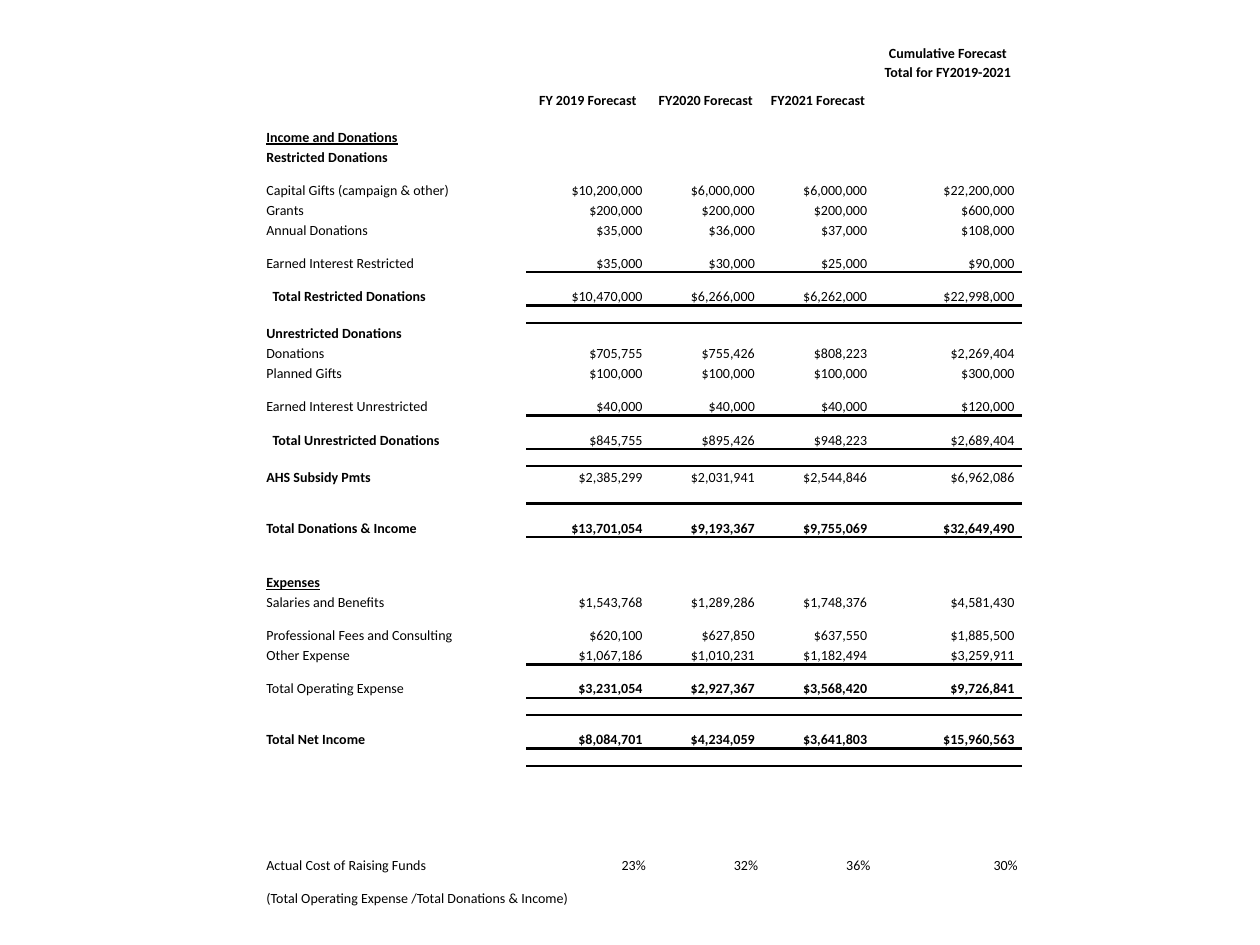
from dataclasses import dataclass

from lxml.etree import SubElement
from pptx import Presentation
from pptx.dml.color import RGBColor
from pptx.enum.text import MSO_ANCHOR, PP_ALIGN
from pptx.oxml.ns import qn
from pptx.util import Pt


@dataclass(frozen=True)
class Theme:
    font: str = "Calibri"
    size: float = 8
    ink: str = "000000"
    rule: float = 1.5
    line_spacing: float = 1.15
    inset: float = 2.2
    money_inset: float = 4
    indent: float = 3.6


@dataclass(frozen=True)
class Line:
    label: str = ""
    values: tuple = ()
    height: float = 11.2
    bold: bool = False
    underline: bool = False
    bold_values: bool = False
    indent: bool = False
    rule: bool = False


THEME = Theme()
SPACER, SPACED = 10, 19
COLUMNS = (133.4, 14.8, 70.6, 64.2, 64.2, 84.2)
FIRST_VALUE = 2
PLAIN_TABLE = "{2D5ABB26-0587-4C30-8999-92F81FD0307C}"
HEADINGS = ("FY 2019 Forecast", "FY2020 Forecast", "FY2021 Forecast",
            "Cumulative Forecast Total for FY2019-2021")
GAP = Line(height=SPACER)

FORECAST = (
    Line(height=38.2),
    GAP,
    Line("Income and Donations", bold=True, underline=True),
    Line("Restricted Donations", bold=True),
    Line("Capital Gifts (campaign & other)",
         ("$10,200,000", "$6,000,000", "$6,000,000", "$22,200,000"), SPACED),
    Line("Grants", ("$200,000", "$200,000", "$200,000", "$600,000")),
    Line("Annual Donations", ("$35,000", "$36,000", "$37,000", "$108,000")),
    Line("Earned Interest Restricted",
         ("$35,000", "$30,000", "$25,000", "$90,000"), SPACED, rule=True),
    Line("Total Restricted Donations",
         ("$10,470,000", "$6,266,000", "$6,262,000", "$22,998,000"), SPACED,
         bold=True, indent=True, rule=True),
    GAP,
    Line("Unrestricted Donations", bold=True),
    Line("Donations", ("$705,755", "$755,426", "$808,223", "$2,269,404")),
    Line("Planned Gifts", ("$100,000", "$100,000", "$100,000", "$300,000")),
    Line("Earned Interest Unrestricted",
         ("$40,000", "$40,000", "$40,000", "$120,000"), SPACED, rule=True),
    Line("Total Unrestricted Donations",
         ("$845,755", "$895,426", "$948,223", "$2,689,404"), SPACED,
         bold=True, indent=True, rule=True),
    GAP,
    Line("AHS Subsidy Pmts",
         ("$2,385,299", "$2,031,941", "$2,544,846", "$6,962,086"), bold=True),
    Line(height=SPACER, rule=True),
    Line("Total Donations & Income",
         ("$13,701,054", "$9,193,367", "$9,755,069", "$32,649,490"), SPACED,
         bold=True, bold_values=True),
    GAP,
    GAP,
    Line("Expenses", bold=True, underline=True),
    Line("Salaries and Benefits",
         ("$1,543,768", "$1,289,286", "$1,748,376", "$4,581,430")),
    Line("Professional Fees and Consulting",
         ("$620,100", "$627,850", "$637,550", "$1,885,500"), SPACED),
    Line("Other Expense",
         ("$1,067,186", "$1,010,231", "$1,182,494", "$3,259,911"), rule=True),
    Line("Total Operating Expense",
         ("$3,231,054", "$2,927,367", "$3,568,420", "$9,726,841"), SPACED,
         bold_values=True, rule=True),
    GAP,
    Line("Total Net Income",
         ("$8,084,701", "$4,234,059", "$3,641,803", "$15,960,563"), SPACED,
         bold=True, bold_values=True, rule=True),
    GAP,
    Line("Actual Cost of Raising Funds", ("23%", "32%", "36%", "30%"), 61.9),
    Line("(Total Operating Expense /Total Donations & Income)", height=SPACED),
)


def write(cell, text, *, bold=False, underline=False, align=PP_ALIGN.LEFT,
          anchor=MSO_ANCHOR.BOTTOM, left=THEME.inset, right=THEME.inset):
    cell.margin_left, cell.margin_right = Pt(left), Pt(right)
    cell.vertical_anchor = anchor
    paragraph = cell.text_frame.paragraphs[0]
    paragraph.alignment = align
    paragraph.line_spacing = THEME.line_spacing
    run = paragraph.add_run()
    run.text = text
    run.font.name = THEME.font
    run.font.size = Pt(THEME.size)
    run.font.bold = bold
    run.font.underline = underline
    run.font.color.rgb = RGBColor.from_string(THEME.ink)


def clear(cell):
    cell.margin_top = cell.margin_bottom = 0
    cell.fill.background()
    paragraph = cell.text_frame.paragraphs[0]
    SubElement(paragraph._p, qn("a:endParaRPr"), sz=str(THEME.size * 100))


def draw_rules(cell, sides):
    properties = cell._tc.get_or_add_tcPr()
    for position, side in enumerate(sides):
        edge = SubElement(properties, qn(f"a:{side}"), w=str(Pt(THEME.rule)))
        fill = SubElement(edge, qn("a:solidFill"))
        SubElement(fill, qn("a:srgbClr"), val=THEME.ink)
        properties.insert(position, edge)


def add_forecast(slide, left, top):
    frame = slide.shapes.add_table(
        len(FORECAST), len(COLUMNS), Pt(left), Pt(top), Pt(sum(COLUMNS)),
        Pt(sum(line.height for line in FORECAST)))
    table = frame.table
    table.first_row = table.horz_banding = False
    table._tbl.tblPr.find(qn("a:tableStyleId")).text = PLAIN_TABLE
    for column, width in zip(table.columns, COLUMNS):
        column.width = Pt(width)
    for cell in table.iter_cells():
        clear(cell)

    for column, heading in enumerate(HEADINGS, FIRST_VALUE):
        is_total = column == len(COLUMNS) - 1
        write(table.cell(0, column), heading, bold=True, align=PP_ALIGN.CENTER,
              anchor=MSO_ANCHOR.TOP if is_total else MSO_ANCHOR.BOTTOM)

    ruled_above = False
    for row, line in enumerate(FORECAST):
        table.rows[row].height = Pt(line.height)
        if line.label:
            write(table.cell(row, 0), line.label, bold=line.bold,
                  underline=line.underline,
                  left=THEME.inset + THEME.indent * line.indent)
        for column, value in enumerate(line.values, FIRST_VALUE):
            write(table.cell(row, column), value, bold=line.bold_values,
                  align=PP_ALIGN.RIGHT,
                  right=THEME.money_inset if value.startswith("$") else THEME.inset)
        sides = ["lnT"] * ruled_above + ["lnB"] * line.rule
        for column in range(FIRST_VALUE, len(COLUMNS)):
            draw_rules(table.cell(row, column), sides)
        ruled_above = line.rule

    formula_row = len(FORECAST) - 1
    table.cell(formula_row, 0).merge(table.cell(formula_row, FIRST_VALUE))


def main():
    presentation = Presentation()
    presentation.slide_width, presentation.slide_height = Pt(720), Pt(540)
    slide = presentation.slides.add_slide(presentation.slide_layouts[6])
    add_forecast(slide, left=150, top=24)
    presentation.save("out.pptx")


if __name__ == "__main__":
    main()
